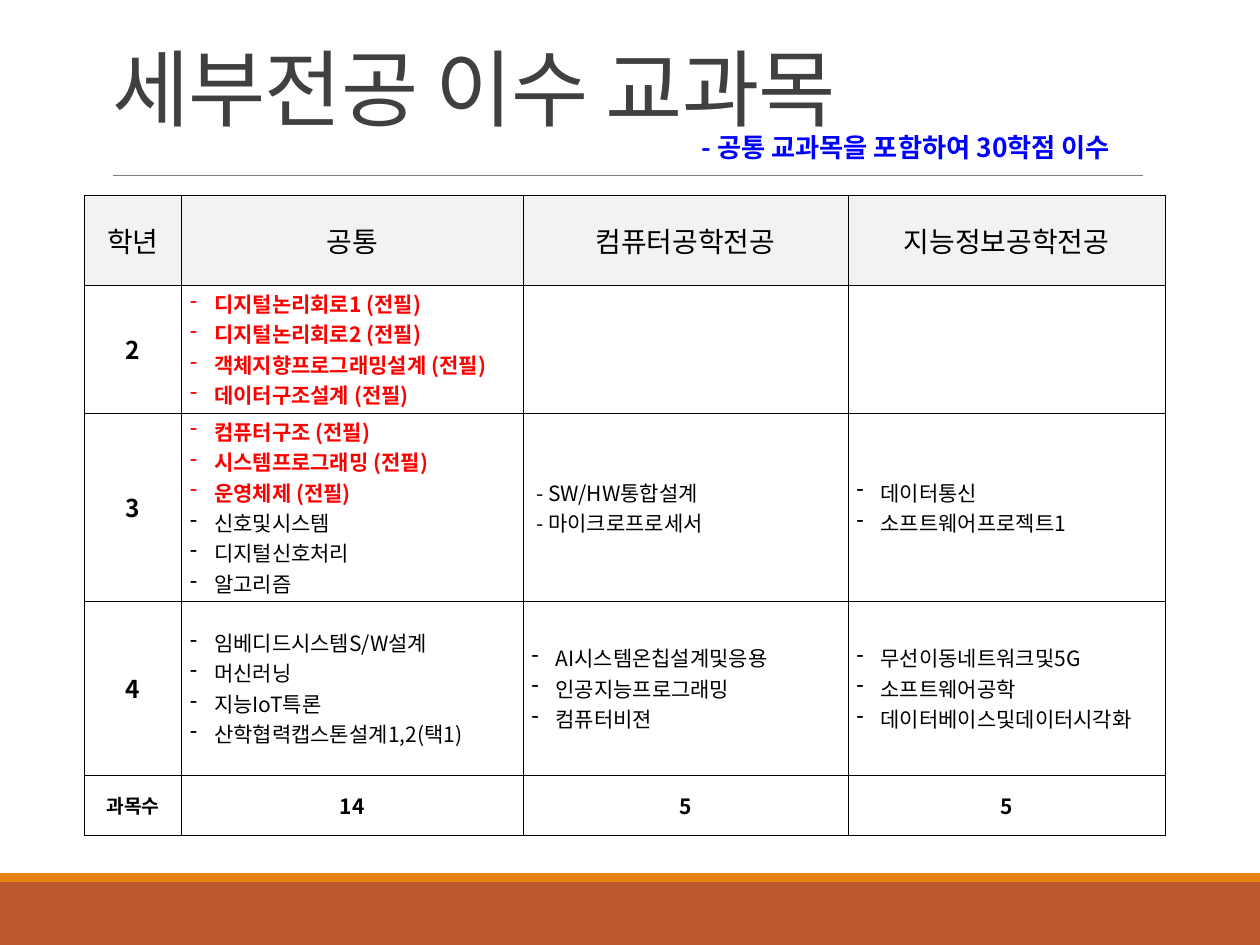
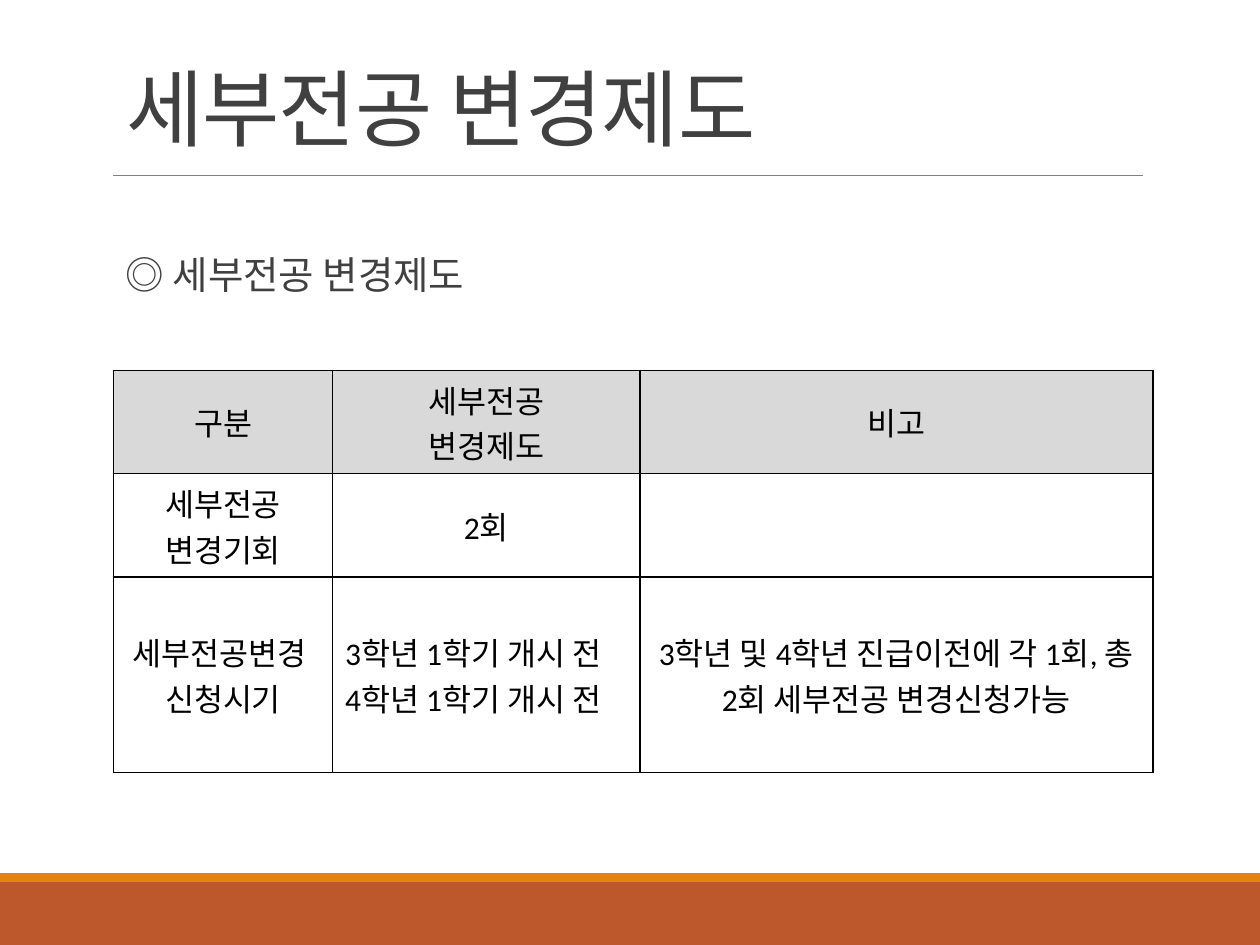
from lxml import etree
from pptx import Presentation
from pptx import util as u
from pptx.dml.color import RGBColor
from pptx.enum import shapes, text
from pptx.oxml import ns

RUST = RGBColor(0xBD, 0x58, 0x2C)
ORANGE = RGBColor(0xE4, 0x83, 0x12)
RULE_GRAY = RGBColor(0x80, 0x80, 0x80)
INK = RGBColor(0x40, 0x40, 0x40)
BLACK = RGBColor(0, 0, 0)
WHITE = RGBColor(0xFF, 0xFF, 0xFF)
RED = RGBColor(0xFF, 0, 0)
BLUE = RGBColor(0, 0, 0xFF)
PALE_GRAY = RGBColor(0xF2, 0xF2, 0xF2)
LIGHT_GRAY = RGBColor(0xD9, 0xD9, 0xD9)
LATIN, KOREAN = "Calibri", "Noto Sans CJK KR"
CENTER = text.PP_ALIGN.CENTER
MIDDLE = text.MSO_ANCHOR.MIDDLE
REQUIRED = "(전필)"

COURSE_HEADS = ["학년", "공통", "컴퓨터공학전공", "지능정보공학전공"]
COURSES = [
    ("2", ["디지털논리회로1 (전필)", "디지털논리회로2 (전필)",
           "객체지향프로그래밍설계 (전필)", "데이터구조설계 (전필)"], [], []),
    ("3", ["컴퓨터구조 (전필)", "시스템프로그래밍 (전필)", "운영체제 (전필)",
           "신호및시스템", "디지털신호처리", "알고리즘"],
     [" - SW/HW통합설계", " - 마이크로프로세서"],
     ["데이터통신", "소프트웨어프로젝트1"]),
    ("4", ["임베디드시스템S/W설계", "머신러닝", "지능IoT특론", "산학협력캡스톤설계1,2(택1)"],
     ["AI시스템온칩설계및응용", "인공지능프로그래밍", "컴퓨터비젼"],
     ["무선이동네트워크및5G", "소프트웨어공학", "데이터베이스및데이터시각화"]),
]
COURSE_COUNTS = ["과목수", "14", "5", "5"]
CHANGE_ROWS = [
    [["구분"], ["세부전공", "변경제도"], ["비고"]],
    [["세부전공", "변경기회"], ["2회"], []],
    [["세부전공변경 ", "신청시기"], ["3학년 1학기 개시 전", "4학년 1학기 개시 전"],
     ["3학년 및 4학년 진급이전에 각 1회, 총 2회 세부전공 변경신청가능"]],
]


def set_attrs(obj, **values):
    """Set several attributes of one object."""
    for name, value in values.items():
        setattr(obj, name, value)


def add_run(p, words, size, color=BLACK, font=KOREAN, bold=False):
    """Add a formatted run to a paragraph."""
    r = p.add_run()
    r.text = words
    set_attrs(r.font, size=u.Pt(size), name=font, bold=bold)
    r.font.color.rgb = color
    ea = etree.SubElement(r._r.get_or_add_rPr(), ns.qn("a:ea"))
    ea.set("typeface", KOREAN)
    return r


def add_lines(tf, lines, size, align=None, bullet=False, **fmt):
    """Write one paragraph per line, optionally with dash bullets."""
    for i, line in enumerate(lines):
        p = tf.add_paragraph() if i else tf.paragraphs[0]
        p.alignment = align
        if bullet:
            pPr = p._p.get_or_add_pPr()
            indent = u.Inches(0.19)
            pPr.set("marL", str(indent))
            pPr.set("indent", str(-indent))
            etree.SubElement(pPr, ns.qn("a:buChar")).set("char", "-")
        if line.endswith(REQUIRED):
            add_run(p, line, size, **{**fmt, "color": RED, "bold": True})
        else:
            add_run(p, line, size, **fmt)


def style_cell(cell, fill, border, insets):
    """Give a cell its borders, fill, anchor and margins."""
    tcPr = cell._tc.get_or_add_tcPr()
    for side in ("lnL", "lnR", "lnT", "lnB"):
        ln = etree.SubElement(tcPr, ns.qn(f"a:{side}"), w=str(u.Pt(border)))
        solid = etree.SubElement(ln, ns.qn("a:solidFill"))
        etree.SubElement(solid, ns.qn("a:srgbClr")).set("val", str(BLACK))
    cell.fill.solid()
    cell.fill.fore_color.rgb = fill
    dx, dy = map(u.Inches, insets)
    set_attrs(cell, vertical_anchor=MIDDLE, margin_left=dx, margin_right=dx,
              margin_top=dy, margin_bottom=dy)


def add_grid(s, left, top, widths, heights):
    """Add an unstyled table with given column widths and row heights."""
    frame = s.shapes.add_table(len(heights), len(widths), u.Inches(left), u.Inches(top),
                               u.Inches(sum(widths)), u.Inches(sum(heights)))
    table = frame.table
    set_attrs(table, first_row=False, horz_banding=False)
    for col, width in zip(table.columns, widths):
        col.width = u.Inches(width)
    for row, height in zip(table.rows, heights):
        row.height = u.Inches(height)
    return table


def add_base(prs, title, left, top):
    """Add a slide with the footer bands, title rule and title."""
    s = prs.slides.add_slide(prs.slide_layouts[5])
    for y, height, color in ((7, 0.5, RUST), (6.93, 0.07, ORANGE)):
        sp = s.shapes.add_shape(shapes.MSO_SHAPE.RECTANGLE, 0, u.Inches(y),
                                prs.slide_width, u.Inches(height))
        sp.shadow.inherit = False
        sp.fill.solid()
        sp.fill.fore_color.rgb = color
        sp.line.fill.background()
    rule = s.shapes.add_connector(shapes.MSO_CONNECTOR.STRAIGHT, u.Inches(0.9),
                                  u.Inches(1.39), u.Inches(9.07), u.Inches(1.39))
    rule.line.color.rgb = RULE_GRAY
    rule.line.width = u.Pt(0.5)
    etree.SubElement(rule._element.spPr, ns.qn("a:effectLst"))
    sp = s.shapes.title
    set_attrs(sp, left=u.Inches(left), top=u.Inches(top),
              width=u.Inches(8.25), height=u.Inches(0.99))
    tf = sp.text_frame
    set_attrs(tf, vertical_anchor=text.MSO_ANCHOR.BOTTOM, word_wrap=True,
              auto_size=text.MSO_AUTO_SIZE.NONE)
    p = tf.paragraphs[0]
    set_attrs(p, alignment=text.PP_ALIGN.LEFT, line_spacing=0.85)
    r = add_run(p, title, 48, INK, LATIN)
    r._r.get_or_add_rPr().set("spc", "-50")
    return s


def add_text(s, box, words, size, wrap, **fmt):
    """Add a one-line text box."""
    sp = s.shapes.add_textbox(*map(u.Inches, box))
    sp.text_frame.word_wrap = wrap
    add_lines(sp.text_frame, [words], size, **fmt)


def add_course_table(s, left, top):
    """Add the table of courses by year and major."""
    table = add_grid(s, left, top, [0.77, 2.71, 2.58, 2.52], [0.71, 1.02, 1.48, 1.38, 0.48])
    last = len(COURSES) + 1
    for i, row in enumerate([COURSE_HEADS, *COURSES, COURSE_COUNTS]):
        for j, content in enumerate(row):
            cell = table.cell(i, j)
            insets = (0.07, 0.02) if i else (0, 0)
            style_cell(cell, WHITE if i else PALE_GRAY, 0.28, insets)
            if isinstance(content, list):
                dashed = not any(line.startswith(" ") for line in content)
                add_lines(cell.text_frame, content, 12, bullet=dashed)
            else:
                size = 16 if i == 0 else 14 if i < last else 11 if j == 0 else 12
                add_lines(cell.text_frame, [content], size, CENTER, bold=i > 0)


def add_change_table(s, left, top):
    """Add the table of rules for changing the major."""
    table = add_grid(s, left, top, [1.74, 2.44, 4.07], [0.82, 0.82, 1.55])
    for i, row in enumerate(CHANGE_ROWS):
        for j, lines in enumerate(row):
            cell = table.cell(i, j)
            style_cell(cell, WHITE if i else LIGHT_GRAY, 1, (0.1, 0.05))
            align = text.PP_ALIGN.LEFT if (i, j) == (2, 1) else CENTER
            add_lines(cell.text_frame, lines, 18, align, font=LATIN)


def build_courses(prs):
    """Build the slide of courses to complete."""
    s = add_base(prs, "세부전공 이수 교과목", 0.79, 0.15)
    add_course_table(s, 0.67, 1.55)
    add_text(s, (5.47, 0.99, 3.87, 0.35), "- 공통 교과목을 포함하여 30학점 이수", 15, False,
             color=BLUE, bold=True)


def build_change(prs):
    """Build the slide on changing the major."""
    s = add_base(prs, "세부전공 변경제도", 0.9, 0.31)
    add_text(s, (0.9, 1.94, 8.59, 0.55), "◎ 세부전공 변경제도", 22, True,
             color=INK, font=LATIN)
    add_change_table(s, 0.9, 2.94)


def main():
    """Build and save the presentation."""
    prs = Presentation()
    set_attrs(prs, slide_width=u.Inches(10), slide_height=u.Inches(7.5))
    build_courses(prs)
    build_change(prs)
    prs.save("out.pptx")


if __name__ == "__main__":
    main()
